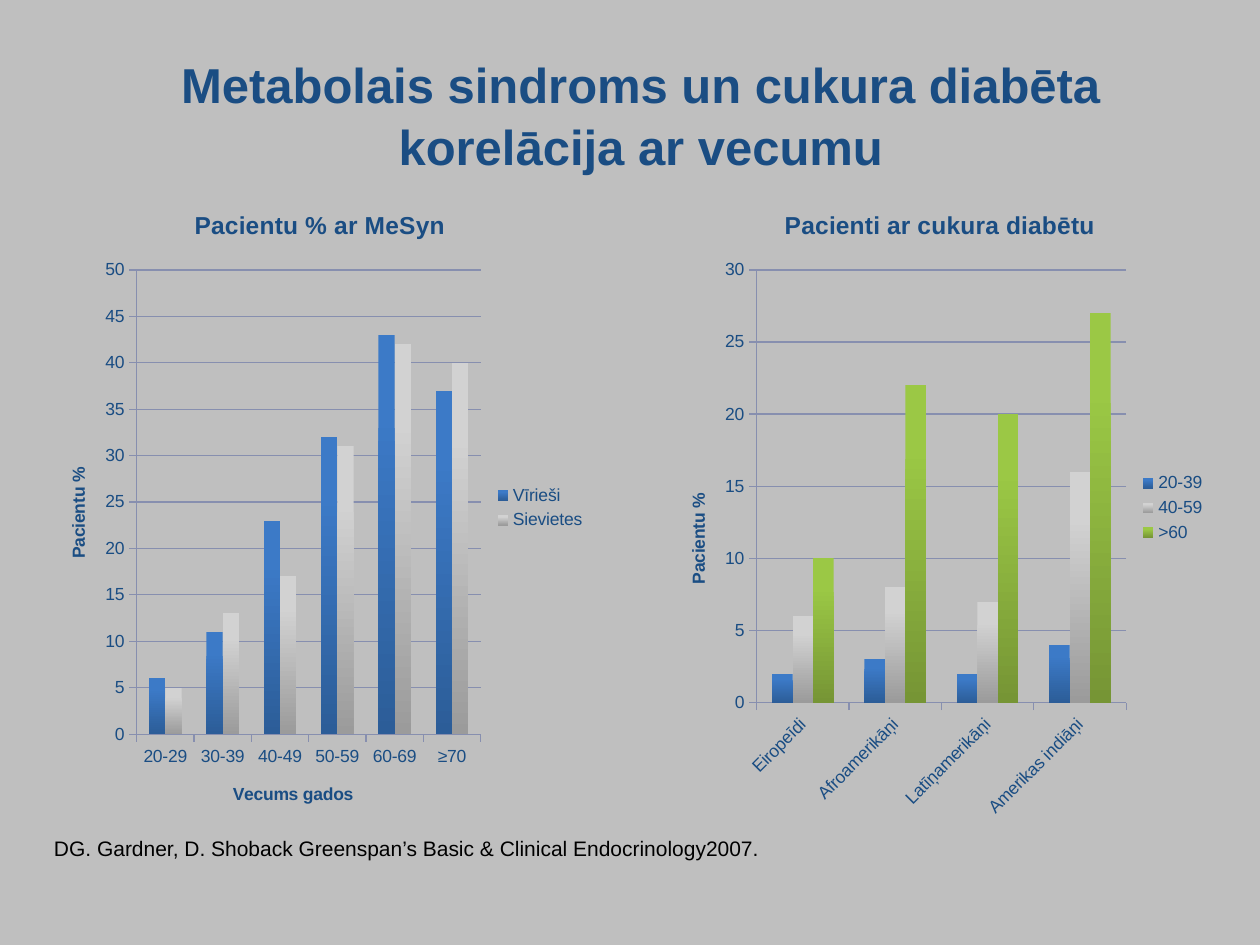
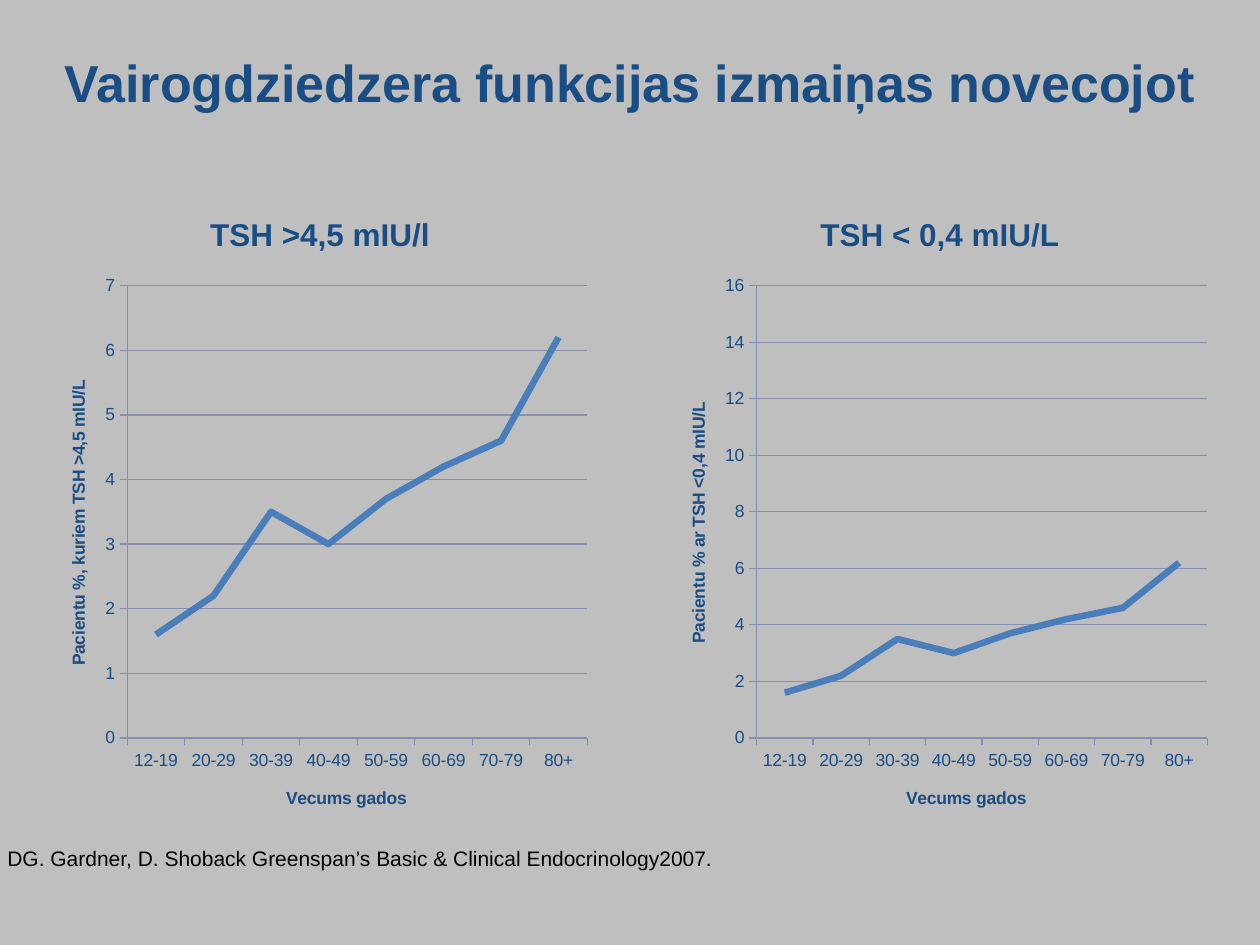
"""Build two slides of charts on metabolic syndrome, diabetes and thyroid function by age."""
import pptx
import pptx.chart.data
import pptx.dml.color
import pptx.enum.chart
import pptx.enum.text
import pptx.util

Inches, Pt = pptx.util.Inches, pptx.util.Pt
COLUMNS = pptx.enum.chart.XL_CHART_TYPE.COLUMN_CLUSTERED
LINES = pptx.enum.chart.XL_CHART_TYPE.LINE_STACKED

THEME = {
    "font": "Arial",
    "background": "BFBFBF",
    "heading": "1A4D83",
    "source": "000000",
    "grid": "878FAF",
    "trend": "4A7EBB",
    "columns": [("3C7AC7", "2C5D98"), ("D2D2D2", "9B9B9B"), ("9BC845", "769535")],
    "label_size": 10,
    "source_size": 12,
    "grid_width": 0.75,
    "trend_width": 3.75,
}
CITATION = "DG. Gardner, D. Shoback Greenspan’s Basic & Clinical Endocrinology2007."
AGES = ["12-19", "20-29", "30-39", "40-49", "50-59", "60-69", "70-79", "80+"]
TSH_SHARES = [1.6, 2.2, 3.5, 3, 3.7, 4.2, 4.6, 6.2]
CHART_LEFTS = [0.33, 5.25]
CHART_SIZE = (4.42, 5.12)

SLIDES = [
    {
        "title": "Metabolais sindroms un cukura diabēta korelācija ar vecumu",
        "title_box": (0.42, 0.33, 9.33, 0.83),
        "title_size": 28,
        "source_box": (0.33, 6.58, 9.25, 0.3),
        "chart_top": 1.47,
        "chart_type": COLUMNS,
        "heading_size": 14,
        "charts": [
            {
                "heading": "Pacientu % ar MeSyn",
                "categories": ["20-29", "30-39", "40-49", "50-59", "60-69", "≥70"],
                "series": {
                    "Vīrieši": [6, 11, 23, 32, 43, 37],
                    "Sievietes": [5, 13, 17, 31, 42, 40],
                },
                "axis_titles": ("Vecums gados", "Pacientu %"),
            },
            {
                "heading": "Pacienti ar cukura diabētu",
                "categories": ["Eiropeīdi", "Afroamerikāņi", "Latīņamerikāņi", "Amerikas indiāņi"],
                "series": {
                    "20-39": [2, 3, 2, 4],
                    "40-59": [6, 8, 7, 16],
                    ">60": [10, 22, 20, 27],
                },
                "axis_titles": (None, "Pacientu %"),
            },
        ],
    },
    {
        "title": "Vairogdziedzera funkcijas izmaiņas novecojot",
        "title_box": (0.28, 0.3, 9.45, 0.69),
        "title_size": 29.7,
        "source_box": (-0.04, 6.66, 9.25, 0.3),
        "chart_top": 1.5,
        "chart_type": LINES,
        "heading_size": 18,
        "charts": [
            {
                "heading": "TSH >4,5 mIU/l",
                "categories": AGES,
                "series": {"Series 1": TSH_SHARES},
                "axis_titles": ("Vecums gados", "Pacientu %, kuriem TSH >4,5 mIU/L"),
            },
            {
                "heading": "TSH < 0,4 mIU/L",
                "categories": AGES,
                "series": {"TSH < 0,4 mIU/L": TSH_SHARES},
                "axis_titles": ("Vecums gados", "Pacientu % ar TSH <0,4 mIU/L"),
                "scale": {"maximum_scale": 16, "major_unit": 2},
            },
        ],
    },
]


def rgb(name):
    return pptx.dml.color.RGBColor.from_string(THEME.get(name, name))


def style_font(font, size, color="heading", bold=False):
    formats = {"name": THEME["font"], "size": Pt(size), "bold": bold}
    for attribute, value in formats.items():
        setattr(font, attribute, value)
    font.color.rgb = rgb(color)


deck = pptx.Presentation()
deck.slide_width, deck.slide_height = Inches(10), Inches(7.5)
backdrop = deck.slide_master.background.fill
backdrop.solid()
backdrop.fore_color.rgb = rgb("background")

for content in SLIDES:
    slide = deck.slides.add_slide(deck.slide_layouts[5])

    title = slide.shapes.title
    title.left, title.top, title.width, title.height = map(Inches, content["title_box"])
    title.text_frame.text = content["title"]
    title_format = {
        "word_wrap": True,
        "auto_size": pptx.enum.text.MSO_AUTO_SIZE.NONE,
        "vertical_anchor": pptx.enum.text.MSO_ANCHOR.TOP,
        "margin_top": Inches(0.08),
    }
    for attribute, value in title_format.items():
        setattr(title.text_frame, attribute, value)
    heading_line = title.text_frame.paragraphs[0]
    heading_line.alignment = pptx.enum.text.PP_ALIGN.CENTER
    heading_line.line_spacing = 1.05
    style_font(heading_line.runs[0].font, content["title_size"], bold=True)

    for left, study in zip(CHART_LEFTS, content["charts"]):
        figures = pptx.chart.data.CategoryChartData()
        figures.categories = study["categories"]
        for group, shares in study["series"].items():
            figures.add_series(group, shares)
        position = map(Inches, (left, content["chart_top"], *CHART_SIZE))
        chart = slide.shapes.add_chart(content["chart_type"], *position, figures).chart
        style_font(chart.font, THEME["label_size"])

        chart.has_title = True
        chart.chart_title.include_in_layout = False
        chart.chart_title.text_frame.text = study["heading"]
        heading_run = chart.chart_title.text_frame.paragraphs[0].runs[0]
        style_font(heading_run.font, content["heading_size"], bold=True)

        axes = (chart.category_axis, chart.value_axis)
        for axis, axis_title in zip(axes, study["axis_titles"]):
            axis.major_tick_mark = pptx.enum.chart.XL_TICK_MARK.OUTSIDE
            axis.minor_tick_mark = pptx.enum.chart.XL_TICK_MARK.NONE
            axis.format.line.color.rgb = rgb("grid")
            axis.format.line.width = Pt(THEME["grid_width"])
            style_font(axis.tick_labels.font, THEME["label_size"])
            axis.has_title = axis_title is not None
            if axis_title:
                axis.axis_title.text_frame.text = axis_title
                axis_run = axis.axis_title.text_frame.paragraphs[0].runs[0]
                style_font(axis_run.font, THEME["label_size"], bold=True)
        chart.value_axis.has_major_gridlines = True
        gridlines = chart.value_axis.major_gridlines.format.line
        gridlines.color.rgb = rgb("grid")
        gridlines.width = Pt(THEME["grid_width"])
        for attribute, value in study.get("scale", {}).items():
            setattr(chart.value_axis, attribute, value)

        plot = chart.plots[0]
        plot.vary_by_categories = False
        chart.has_legend = content["chart_type"] == COLUMNS
        if chart.has_legend:
            chart.legend.position = pptx.enum.chart.XL_LEGEND_POSITION.RIGHT
            chart.legend.include_in_layout = False
            style_font(chart.legend.font, THEME["label_size"])
            plot.gap_width, plot.overlap = 150, 0
            for group, shades in zip(plot.series, THEME["columns"]):
                fill = group.format.fill
                fill.gradient()
                fill.gradient_angle = 270
                for stop, shade, place in zip(fill.gradient_stops, shades, (0.2, 1)):
                    stop.color.rgb = rgb(shade)
                    stop.position = place
        else:
            for group in plot.series:
                group.smooth = False
                group.format.line.color.rgb = rgb("trend")
                group.format.line.width = Pt(THEME["trend_width"])

    source = slide.shapes.add_textbox(*map(Inches, content["source_box"])).text_frame
    source.word_wrap = True
    source.auto_size = pptx.enum.text.MSO_AUTO_SIZE.SHAPE_TO_FIT_TEXT
    source.text = CITATION
    style_font(source.paragraphs[0].runs[0].font, THEME["source_size"], "source")

deck.save("out.pptx")
